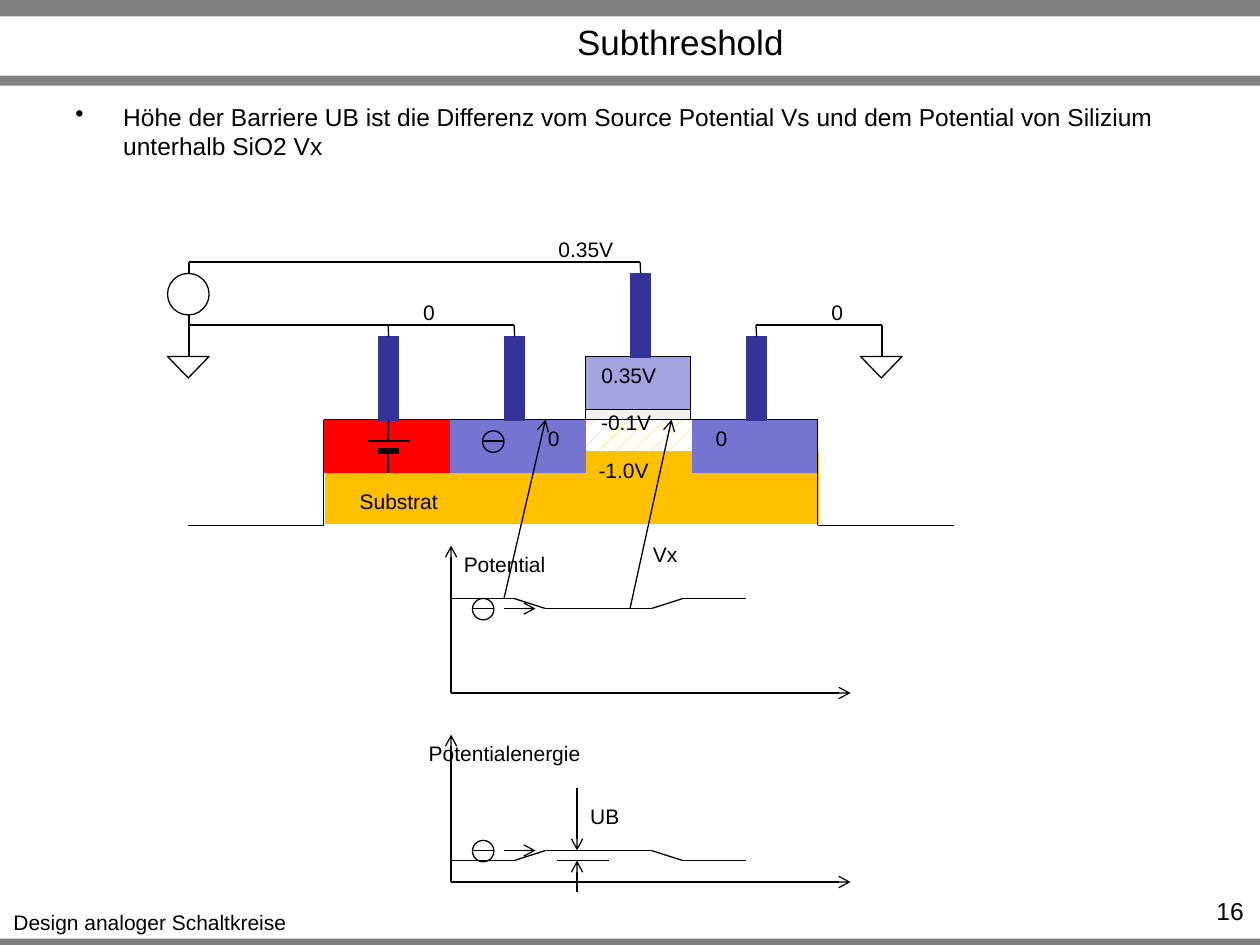
from dataclasses import dataclass
from itertools import pairwise

from lxml.etree import SubElement
from pptx import Presentation
from pptx.dml.color import RGBColor
from pptx.enum.dml import MSO_PATTERN
from pptx.enum.shapes import MSO_CONNECTOR, MSO_SHAPE
from pptx.enum.text import MSO_ANCHOR, MSO_AUTO_SIZE, PP_ALIGN
from pptx.oxml.ns import qn
from pptx.util import Inches, Pt


@dataclass(frozen=True)
class Theme:
    font: str = "Arial"
    title_size: int = 20
    body_size: int = 14
    label_size: int = 12
    line_width: float = 0.75
    ink: str = "000000"
    paper: str = "FFFFFF"
    bar: str = "808080"
    substrate: str = "FFC000"
    diffusion: str = "7575D1"
    bulk: str = "FF0000"
    gate: str = "A3A3E0"
    oxide: str = "F2F2F2"
    contact: str = "333399"


def rgb(value):
    return RGBColor.from_string(value)


class SlideBuilder:
    def __init__(self, slide, theme):
        self.slide = slide
        self.theme = theme

    def style(self, paragraph, size, align):
        paragraph.alignment = align
        paragraph.font.name = self.theme.font
        paragraph.font.size = Pt(size)
        paragraph.font.color.rgb = rgb(self.theme.ink)

    def title(self, text, left, top, width, height):
        shape = self.slide.shapes.title
        shape.left, shape.top = Inches(left), Inches(top)
        shape.width, shape.height = Inches(width), Inches(height)
        shape.text_frame.text = text
        shape.text_frame.vertical_anchor = MSO_ANCHOR.MIDDLE
        self.style(shape.text_frame.paragraphs[0], self.theme.title_size, PP_ALIGN.CENTER)

    def text(self, text, left, top, width, height, size, align, bullet=False):
        box = self.slide.shapes.add_textbox(
            Inches(left), Inches(top), Inches(width), Inches(height))
        frame = box.text_frame
        frame.word_wrap = True
        frame.text = text
        paragraph = frame.paragraphs[0]
        if bullet:
            properties = paragraph._p.get_or_add_pPr()
            properties.set("marL", str(Inches(0.38)))
            properties.set("indent", str(Inches(-0.38)))
            SubElement(properties, qn("a:buChar")).set("char", "•")
        self.style(paragraph, size, align)
        return box

    def label(self, text, left, top, width):
        box = self.text(text, left, top, width, 0.3, self.theme.label_size, PP_ALIGN.CENTER)
        box.text_frame.word_wrap = False
        box.text_frame.auto_size = MSO_AUTO_SIZE.SHAPE_TO_FIT_TEXT

    def shape(self, kind, left, top, width, height, fill=None, outline=False):
        shape = self.slide.shapes.add_shape(
            kind, Inches(left), Inches(top), Inches(width), Inches(height))
        shape.shadow.inherit = False
        if fill:
            shape.fill.solid()
            shape.fill.fore_color.rgb = rgb(fill)
        else:
            shape.fill.background()
        if outline:
            shape.line.color.rgb = rgb(self.theme.ink)
            shape.line.width = Pt(self.theme.line_width)
        else:
            shape.line.fill.background()
        return shape

    def block(self, left, top, width, height, fill, outline=False):
        return self.shape(MSO_SHAPE.FLOWCHART_PROCESS, left, top, width, height, fill, outline)

    def line(self, start, end, arrow=False, width=None):
        connector = self.slide.shapes.add_connector(
            MSO_CONNECTOR.STRAIGHT, *(Inches(value) for value in (*start, *end)))
        connector.line.color.rgb = rgb(self.theme.ink)
        connector.line.width = Pt(width or self.theme.line_width)
        if arrow:
            SubElement(connector.line._get_or_add_ln(), qn("a:tailEnd")).set("type", "arrow")
        SubElement(connector._element.spPr, qn("a:effectLst"))
        return connector

    def polyline(self, *points):
        return [self.line(start, end) for start, end in pairwise(points)]

    def group(self, shapes):
        self.slide.shapes.add_group_shape(shapes)

    def electron(self, left, top):
        size, middle = 0.17, top + 0.08
        self.group([
            self.shape(MSO_SHAPE.OVAL, left, top, size, size, outline=True),
            self.line((left + size, middle), (left, middle))])

    def ground(self, center):
        triangle = self.shape(
            MSO_SHAPE.ISOSCELES_TRIANGLE, center - 0.17, 2.83, 0.33, 0.17, outline=True)
        triangle._element.spPr.find(qn("a:xfrm")).set("flipV", "1")
        self.line((center, 2.58), (center, 2.83))

    def contact(self, left, top, wire_height):
        pillar = self.block(left, top, 0.17, 0.67, self.theme.contact)
        lead = self.line((left + 0.08, wire_height), (left + 0.08, top))
        lead.end_connect(pillar, 0)
        return pillar

    def plot(self, base, text, text_left, text_width, outer, inner):
        """Axes, label, moving electron and a profile that shifts in the channel."""
        self.line((3.58, base), (3.58, base - 1.17), arrow=True)
        self.line((3.58, base), (6.75, base), arrow=True)
        self.label(text, text_left, base - 1.17, text_width)
        self.group(self.polyline(
            (3.58, outer), (4.08, outer), (4.33, inner),
            (5.17, inner), (5.42, outer), (5.92, outer)))
        electron_middle = base - (0.67 if inner > outer else 0.25)
        self.electron(3.75, electron_middle - 0.08)
        self.line((4, electron_middle), (4.25, electron_middle), arrow=True)


def main():
    theme = Theme()
    presentation = Presentation()
    presentation.slide_width, presentation.slide_height = Inches(10), Inches(7.5)
    slide = presentation.slides.add_slide(presentation.slide_layouts[5])
    builder = SlideBuilder(slide, theme)

    # Frame bars, title, statement and footer
    for top, height in ((0, 0.13), (0.6, 0.08), (7.45, 0.08)):
        builder.shape(MSO_SHAPE.RECTANGLE, 0, top, 10, height, theme.bar)
    builder.title("Subthreshold", 1.3, 0.14, 8.2, 0.38)
    builder.text("Höhe der Barriere UB ist die Differenz vom Source Potential Vs und dem "
                 "Potential von Silizium unterhalb SiO2 Vx",
                 0.5, 0.76, 9, 0.49, theme.body_size, PP_ALIGN.LEFT, bullet=True)
    builder.label("Design analoger Schaltkreise", 0, 7.17, 2.38)
    builder.text("16", 9.1, 7.06, 0.87, 0.24, theme.body_size, PP_ALIGN.RIGHT)

    # Substrate, channel and doped regions
    builder.block(2.58, 3.58, 3.92, 0.58, theme.substrate)
    channel = builder.block(4.58, 3.33, 1, 0.25, theme.paper)
    channel.fill.patterned()
    channel.fill.pattern = MSO_PATTERN.PERCENT_5
    channel.fill.fore_color.rgb = rgb(theme.substrate)
    channel.fill.back_color.rgb = rgb(theme.paper)
    for left, width, fill in ((5.49, 1, theme.diffusion), (3.57, 1.08, theme.diffusion),
                              (2.57, 1, theme.bulk)):
        builder.block(left, 3.33, width, 0.42, fill)
    builder.polyline((1.49, 4.17), (2.57, 4.17), (2.57, 3.33),
                     (6.49, 3.33), (6.49, 4.17), (7.57, 4.17))

    # Gate stack
    builder.shape(MSO_SHAPE.RECTANGLE, 4.65, 2.83, 0.83, 0.42, theme.gate, outline=True)
    builder.block(4.65, 3.25, 0.83, 0.08, theme.oxide, outline=True)

    # Contacts with their leads
    bulk_contact = builder.contact(3, 2.67, 2.58)
    for left, top, wire_height in ((4, 2.67, 2.58), (5.92, 2.67, 2.58), (5, 2.17, 2.08)):
        builder.contact(left, top, wire_height)

    # Junction battery in the bulk region
    upper_lead = builder.line((3.08, 3.5), (3.08, 3.33))
    upper_lead.end_connect(bulk_contact, 2)
    builder.group([
        builder.line((2.92, 3.5), (3.25, 3.5)),
        builder.line((3, 3.58), (3.17, 3.58), width=3.5),
        upper_lead,
        builder.line((3.08, 3.75), (3.08, 3.58))])

    # Voltage source, wires and grounds
    builder.shape(MSO_SHAPE.OVAL, 1.33, 2.17, 0.33, 0.33, outline=True)
    builder.polyline((5.08, 2.08), (1.5, 2.08), (1.5, 2.17))
    builder.line((1.5, 2.5), (1.5, 2.75))
    builder.line((4.08, 2.58), (1.5, 2.58))
    builder.line((7, 2.58), (6, 2.58))
    for center in (1.5, 7):
        builder.ground(center)

    # Potential and potential energy plots
    builder.electron(3.83, 3.42)
    builder.plot(5.5, "Potential", 3.58, 0.85, outer=4.75, inner=4.83)
    builder.plot(7, "Potentialenergie", 3.3, 1.41, outer=6.83, inner=6.75)

    # Barrier height marker and pointers into the device
    builder.line((4.83, 6.83), (4.42, 6.83))
    for start, end in (((4.58, 6.25), (4.58, 6.75)), ((4.58, 7.08), (4.58, 6.83)),
                       ((5, 4.83), (5.33, 3.33)), ((4, 4.75), (4.33, 3.33))):
        builder.line(start, end, arrow=True)

    # Voltage and region labels
    for text, left, top, width in (
            ("0.35V", 4.67, 2.83, 0.64), ("0.35V", 4.33, 1.83, 0.64),
            ("0", 3.26, 2.33, 0.29), ("0", 6.5, 2.33, 0.29),
            ("0", 4.25, 3.33, 0.29), ("0", 5.58, 3.33, 0.29),
            ("-1.0V", 4.65, 3.58, 0.6), ("-0.1V", 4.67, 3.2, 0.6),
            ("Substrat", 2.75, 3.83, 0.83), ("UB", 4.58, 6.33, 0.44),
            ("Vx", 5.08, 4.25, 0.4)):
        builder.label(text, left, top, width)

    presentation.save("out.pptx")


if __name__ == "__main__":
    main()
